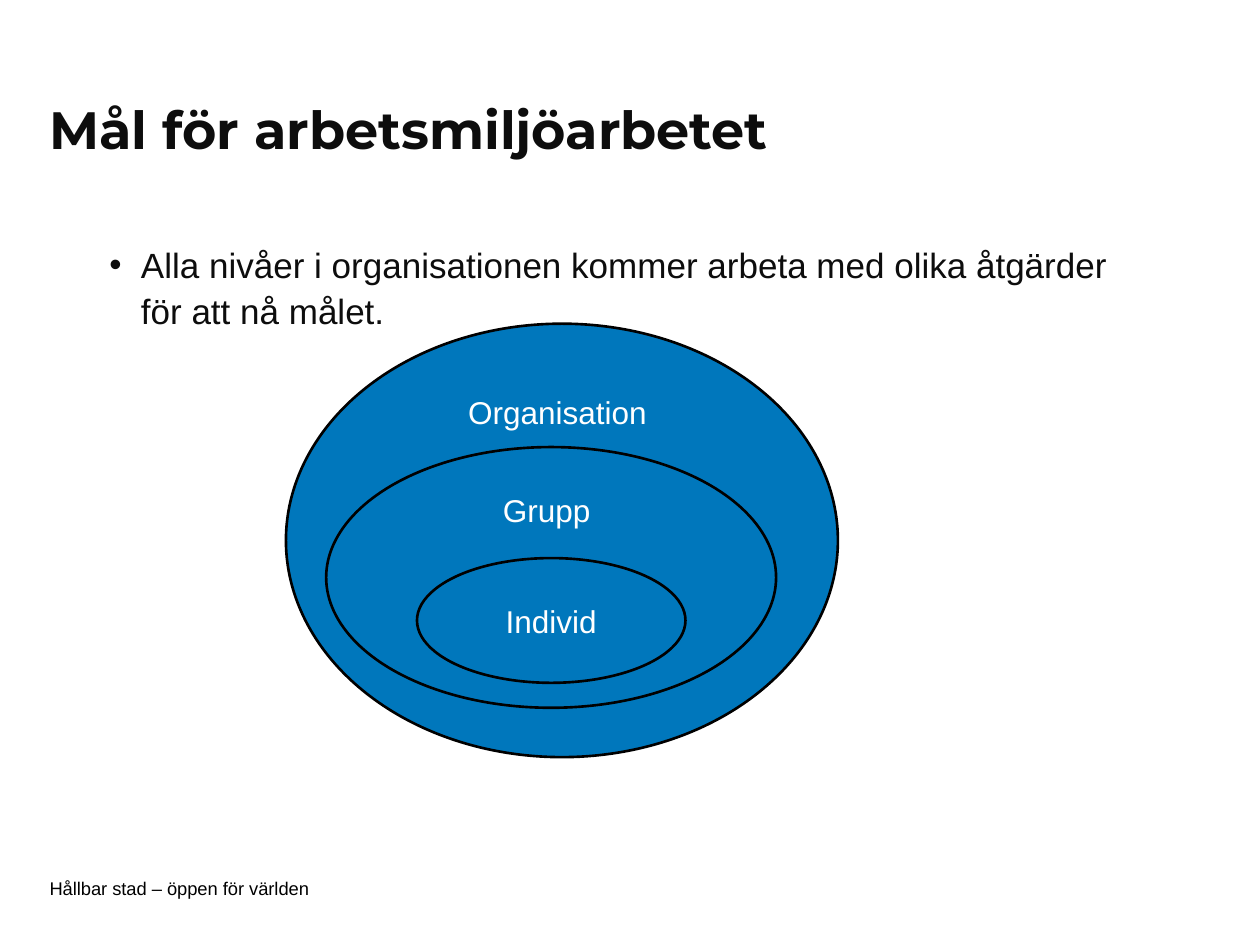
from lxml import etree
from pptx import Presentation
from pptx.dml.color import RGBColor
from pptx.enum.shapes import MSO_SHAPE
from pptx.enum.text import MSO_ANCHOR, PP_ALIGN
from pptx.oxml.ns import qn
from pptx.util import Pt

OVAL = MSO_SHAPE.OVAL
TOP, MIDDLE = MSO_ANCHOR.TOP, MSO_ANCHOR.MIDDLE
LEFT, CENTER = PP_ALIGN.LEFT, PP_ALIGN.CENTER
TITLE_ONLY = 5
COLORS = {
    "text": "0D0D0D",
    "black": "000000",
    "white": "FFFFFF",
    "blue": "0077BC",
}


def color(name):
    return RGBColor.from_string(COLORS[name])


def place(shape, box):
    shape.left, shape.top, shape.width, shape.height = [Pt(length) for length in box]


def write(shape, text, size, ink, font="Arial", bold=False, align=LEFT, anchor=TOP):
    frame = shape.text_frame
    frame.text = text
    frame.word_wrap = True
    frame.vertical_anchor = anchor
    para = frame.paragraphs[0]
    para.alignment = align
    span = para.runs[0]
    span.font.name = font
    span.font.size = Pt(size)
    span.font.bold = bold
    span.font.color.rgb = color(ink)
    return para


def set_margins(shape, side, end):
    frame = shape.text_frame
    frame.margin_left = frame.margin_right = Pt(side)
    frame.margin_top = frame.margin_bottom = Pt(end)


def add_title(page, box):
    title = page.shapes.title
    place(title, box)
    para = write(title, "Mål för arbetsmiljöarbetet", 30, "text",
                 font="Montserrat", bold=True, anchor=MIDDLE)
    para.line_spacing = 0.9
    set_margins(title, 0, 3.6)


def add_body(page, box):
    body = page.shapes.add_textbox(*[Pt(length) for length in box])
    para = write(body, "Alla nivåer i organisationen kommer arbeta med olika "
                 "åtgärder för att nå målet.", 20, "text")
    set_margins(body, 0, 0)
    para.line_spacing = 1.1
    para.space_after = Pt(3)
    properties = para._p.get_or_add_pPr()
    properties.set("marL", str(Pt(18)))
    properties.set("indent", str(Pt(-18)))
    etree.SubElement(properties, qn("a:buFont"), typeface="Arial")
    etree.SubElement(properties, qn("a:buChar"), char="•")


def add_footer(page, box):
    footer = page.shapes.add_textbox(*[Pt(length) for length in box])
    write(footer, "Hållbar stad – öppen för världen", 10.5, "black", anchor=MIDDLE)
    set_margins(footer, 0, 0)


def add_level(page, box, label, anchor):
    level = page.shapes.add_shape(OVAL, *[Pt(length) for length in box])
    level.shadow.inherit = False
    level.fill.solid()
    level.fill.fore_color.rgb = color("blue")
    level.line.color.rgb = color("black")
    level.line.width = Pt(1.5)
    write(level, label, 18, "white", align=CENTER, anchor=anchor)


def add_levels(page, box):
    left, top, width, height = box
    add_level(page, box, "Organisation ", TOP)
    add_level(page, (left + 23, top + 70.5, width - 58.3, height - 98.7), "Grupp ", TOP)
    add_level(page, (left + 74.9, top + 133.9, width - 162, height - 176.4),
              "Individ", MIDDLE)


def main():
    deck = Presentation()
    deck.slide_width, deck.slide_height = Pt(720), Pt(540)
    page = deck.slides.add_slide(deck.slide_layouts[TITLE_ONLY])
    add_title(page, (28.3, 30.2, 541.4, 90.7))
    add_body(page, (62.6, 136.8, 594.7, 317.5))
    add_levels(page, (163.4, 185, 315.4, 247.7))
    add_footer(page, (28.3, 501.8, 510.5, 11.5))
    deck.save("out.pptx")


if __name__ == "__main__":
    main()
